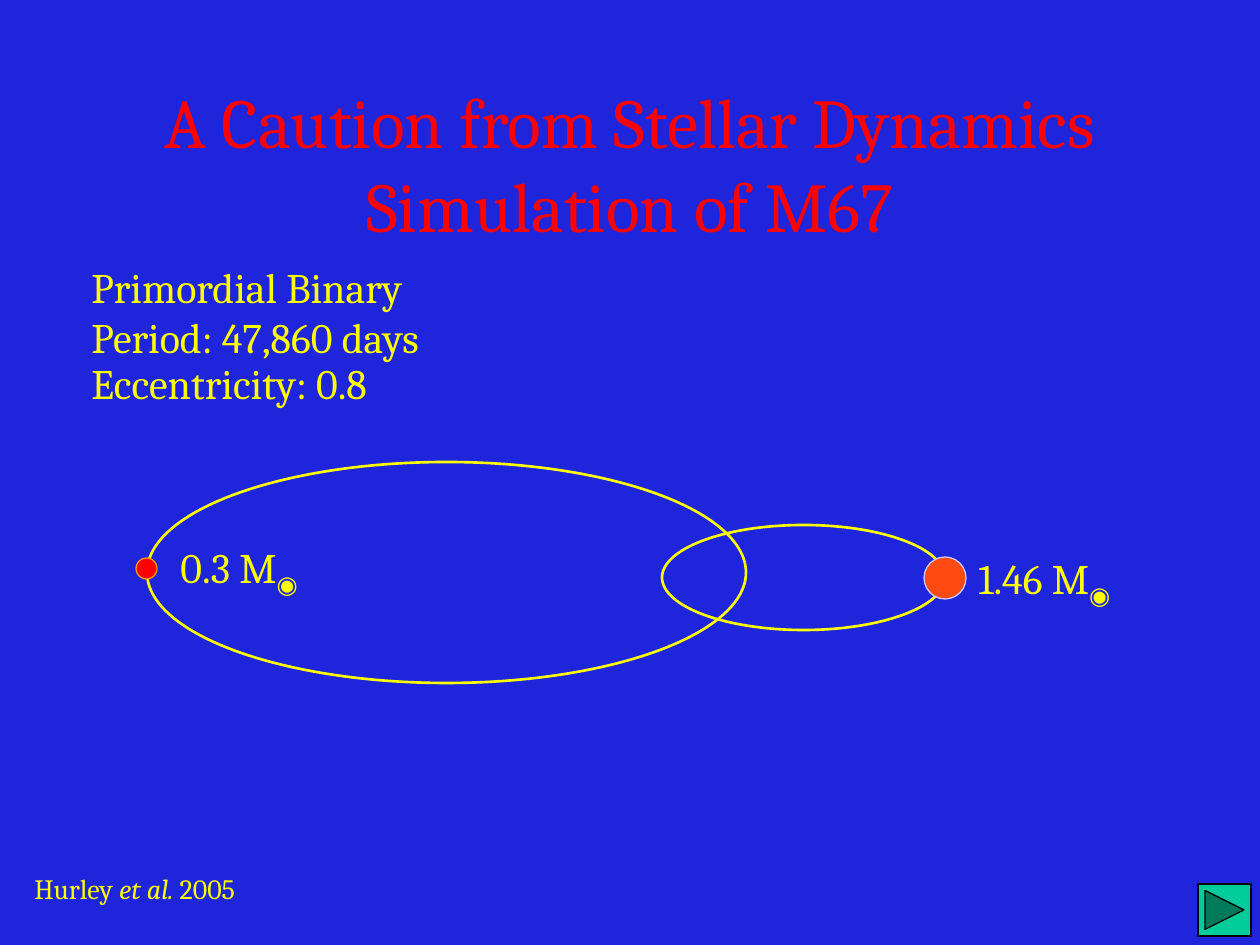
from pptx import Presentation
from pptx.dml.color import RGBColor
from pptx.enum.shapes import MSO_SHAPE
from pptx.enum.text import MSO_ANCHOR, MSO_AUTO_SIZE, PP_ALIGN
from pptx.util import Pt

OVAL = MSO_SHAPE.OVAL
NEXT = MSO_SHAPE.ACTION_BUTTON_FORWARD_OR_NEXT
LEFT, CENTER = PP_ALIGN.LEFT, PP_ALIGN.CENTER
TOP, MIDDLE = MSO_ANCHOR.TOP, MSO_ANCHOR.MIDDLE

FONT = "Cambria"
SCALE = 914400 / 126
COLORS = {
    "back": "1E25DA", "yellow": "FFFF00", "red": "FF0000", "star": "FF4B11",
    "pale": "CCCCFF", "amber": "FF9900", "green": "00CC99", "black": "000000",
}

# Content: a paragraph is a list of (text, style) runs
TITLE = [[("A Caution from Stellar Dynamics", ""),
          ("Simulation of M67", "break")]]
FACTS = [[(line, "")] for line in
         ("Primordial Binary", "Period: 47,860 days", "Eccentricity: 0.8")]
SOURCE = [[("Hurley ", ""), ("et al. ", "italic"), ("2005", "")]]
MASSES = [
    ("0.3 M", (168, 535, 210, 63)),
    ("1.46 M", (966, 546, 231, 63)),
]

# Preset, box, fill, line, line width
SHAPES = [
    (OVAL, (147, 462, 599, 221), None, "yellow", 1.5),    # wide orbit
    (OVAL, (662, 525, 283, 105), None, "yellow", 1.5),    # small orbit
    (OVAL, (924, 557, 42, 42), "star", "pale", 0.75),     # heavy star
    (OVAL, (136, 558, 21, 21), "red", "amber", 0.75),     # light star
    (NEXT, (1198, 884, 53, 52), "green", "black", 0.75),  # next button
]


def px(box):
    return [round(v * SCALE) for v in box]


def rgb(name):
    return RGBColor.from_string(COLORS[name])


def write(frame, paras, size=24, color="yellow", align=LEFT, anchor=TOP,
          wrap=True, lines=(), gap=0):
    frame.word_wrap = wrap
    frame.auto_size = MSO_AUTO_SIZE.NONE
    frame.vertical_anchor = anchor
    for i, runs in enumerate(paras):
        para = frame.add_paragraph() if i else frame.paragraphs[0]
        para.alignment = align
        para.space_before = Pt(gap if i else 0)
        if lines:
            para.line_spacing = lines[i]
        for text, style in runs:
            if style == "break":
                para.add_line_break()
            run = para.add_run()
            run.text = text
            font = run.font
            font.name, font.size = FONT, Pt(size)
            font.color.rgb = rgb(color)
            if style == "italic":
                font.italic = True
            elif style == "sub":
                run._r.get_or_add_rPr().set("baseline", "-25000")


def draw(slide, kind, box, fill, line, width):
    shape = slide.shapes.add_shape(kind, *px(box))
    shape.shadow.inherit = False
    if fill:
        shape.fill.solid()
        shape.fill.fore_color.rgb = rgb(fill)
    else:
        shape.fill.background()
    shape.line.color.rgb = rgb(line)
    shape.line.width = Pt(width)


def label(slide, box, paras, **form):
    write(slide.shapes.add_textbox(*px(box)).text_frame, paras, **form)


def main():
    deck = Presentation()
    deck.slide_width, deck.slide_height = px((1260, 945))
    slide = deck.slides.add_slide(deck.slide_layouts[5])
    slide.background.fill.solid()
    slide.background.fill.fore_color.rgb = rgb("back")

    # Title
    title = slide.shapes.title
    title.left, title.top, title.width, title.height = px((94, 84, 1071, 158))
    write(title.text_frame, TITLE, size=40, color="red",
          align=CENTER, anchor=MIDDLE)

    # Orbits, stars and button
    for item in SHAPES:
        draw(slide, *item)

    # Labels
    for mass, box in MASSES:
        label(slide, box, [[(mass, ""), ("◉", "sub")]])
    label(slide, (79, 261, 599, 165), FACTS, lines=(0.9, 0.5, 0.5), gap=12)
    label(slide, (22, 865, 229, 47), SOURCE, size=16, wrap=False)

    deck.save("out.pptx")


if __name__ == "__main__":
    main()
